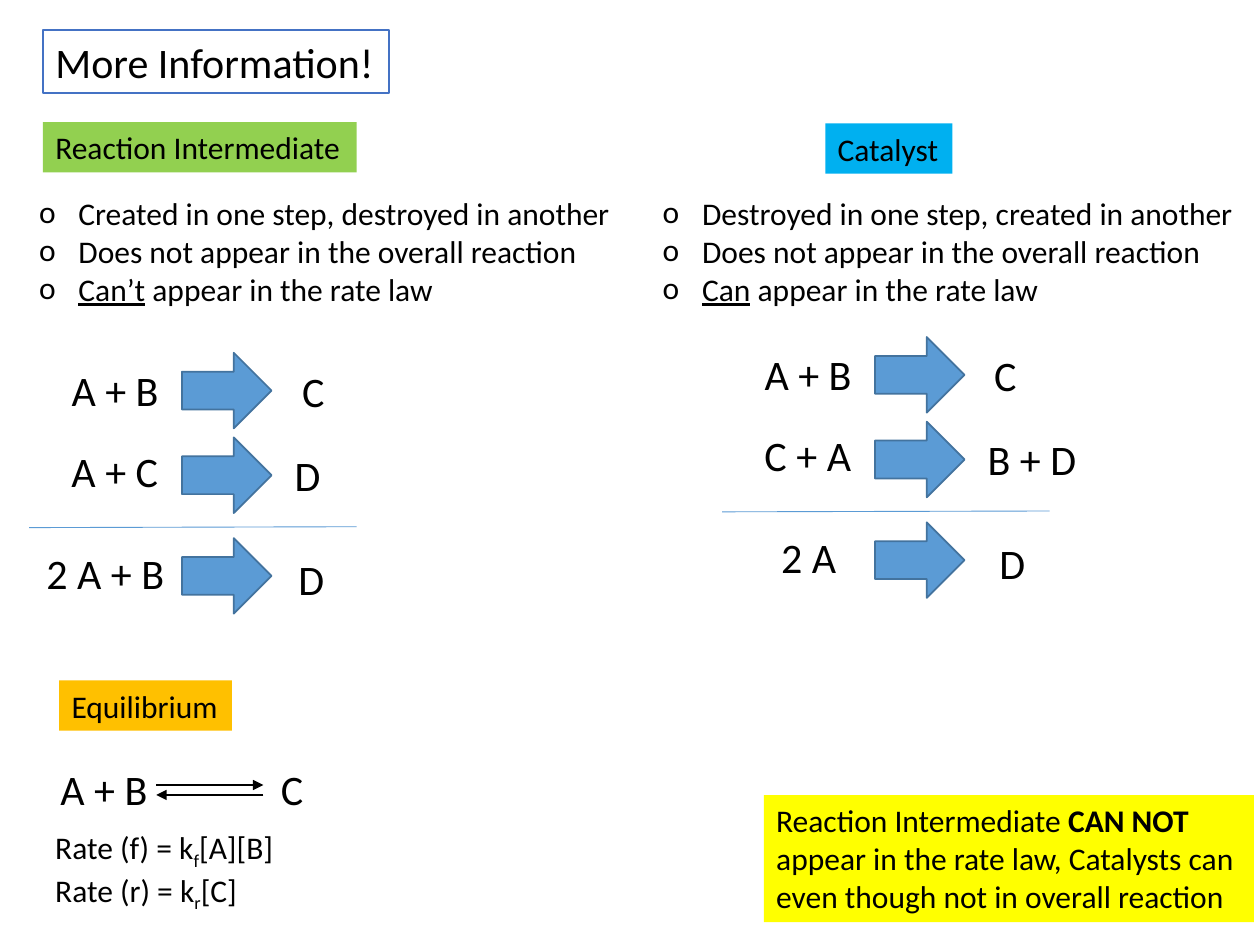
from dataclasses import dataclass

import pptx
import pptx.dml.color
import pptx.enum.shapes
import pptx.enum.text
import pptx.oxml.ns
import pptx.util
from lxml import etree

Pt = pptx.util.Pt
SHAPES = pptx.enum.shapes.MSO_SHAPE


@dataclass(frozen=True)
class Theme:
    font: str = "Calibri"
    large: int = 24
    normal: int = 18
    ink: str = "000000"
    paper: str = "FFFFFF"
    title_line: str = "4472C4"
    intermediate: str = "92D050"
    catalyst: str = "00B0F0"
    equilibrium: str = "FFC000"
    note: str = "FFFF00"
    arrow: str = "5B9BD5"
    arrow_line: str = "43739E"


THEME = Theme()


@dataclass(frozen=True)
class Span:
    text: str
    bold: bool = False
    underline: bool = False
    subscript: bool = False


@dataclass(frozen=True)
class Place:
    left: float
    top: float
    width: float
    height: float


@dataclass(frozen=True)
class Side:
    """One side of a reaction step; left is measured from the mechanism's origin."""
    text: str
    left: float
    width: float


@dataclass(frozen=True)
class Mechanism:
    left: float
    top: float
    steps: tuple[tuple[Side, Side], ...]


# Tops of the reactants, arrow and products in each row of a mechanism
ROW_TOPS = ((204.6, 201.6, 205.4), (251.1, 250, 253.2), (309.2, 307.5, 312.6))

MECHANISMS = (
    Mechanism(0, 0, (
        (Side("A + B", 33.8, 70), Side("C", 165.5, 27)),
        (Side("A + C", 33.8, 64), Side("D", 161.3, 30)),
        (Side("2 A + B", 19.4, 82), Side("D", 163.4, 30)),
    )),
    Mechanism(396, -9, (
        (Side("A + B", 33.8, 70), Side("C", 165, 27)),
        (Side("C + A", 33.8, 66), Side("B + D", 161.3, 66)),
        (Side("2 A", 43.2, 46), Side("D", 168, 30)),
    )),
)


def color(value: str) -> pptx.dml.color.RGBColor:
    return pptx.dml.color.RGBColor.from_string(value)


def put(shape, place: Place) -> None:
    shape.left, shape.top = Pt(place.left), Pt(place.top)
    shape.width, shape.height = Pt(place.width), Pt(place.height)


def paint(shape, fill: str, line: str | None = None) -> None:
    shape.fill.solid()
    shape.fill.fore_color.rgb = color(fill)
    if line:
        shape.line.color.rgb = color(line)
        shape.line.width = Pt(1)
    else:
        shape.line.fill.background()


def add_bullet(para) -> None:
    properties = para._p.get_or_add_pPr()
    properties.set("marL", str(Pt(22.5)))
    properties.set("indent", str(Pt(-22.5)))
    for tag, key, value in (("a:buFont", "typeface", THEME.font), ("a:buChar", "char", "o")):
        etree.SubElement(properties, pptx.oxml.ns.qn(tag)).set(key, value)


def write(shape, *paragraphs: tuple[Span, ...], size: int = THEME.normal,
          wrap: bool = False, bullets: bool = False) -> None:
    frame = shape.text_frame
    frame.word_wrap = wrap
    frame.auto_size = pptx.enum.text.MSO_AUTO_SIZE.NONE
    frame.vertical_anchor = pptx.enum.text.MSO_ANCHOR.TOP
    for index, spans in enumerate(paragraphs):
        para = frame.add_paragraph() if index else frame.paragraphs[0]
        para.alignment = pptx.enum.text.PP_ALIGN.LEFT
        para.space_before = Pt(0)
        if bullets:
            add_bullet(para)
        for item in spans:
            span = para.add_run()
            span.text = item.text
            span.font.name, span.font.size = THEME.font, Pt(size)
            span.font.color.rgb = color(THEME.ink)
            span.font.bold, span.font.underline = item.bold, item.underline
            if item.subscript:
                span._r.get_or_add_rPr().set("baseline", "-25000")


def add_text(page, place: Place, *paragraphs: tuple[Span, ...], size: int = THEME.large) -> None:
    box = page.shapes.add_textbox(0, 0, 0, 0)
    put(box, place)
    write(box, *paragraphs, size=size)


def add_shape(page, kind, place: Place, fill: str, line: str | None = None):
    shape = page.shapes.add_shape(kind, 0, 0, 0, 0)
    put(shape, place)
    shape.shadow.inherit = False
    paint(shape, fill, line)
    return shape


def add_label(page, place: Place, fill: str, *spans: Span, wrap: bool = False) -> None:
    write(add_shape(page, SHAPES.RECTANGLE, place, fill), spans, wrap=wrap)


def add_line(page, start: tuple[float, float], end: tuple[float, float],
             line: str, width: float, arrowhead: bool = False) -> None:
    connector = page.shapes.add_connector(
        pptx.enum.shapes.MSO_CONNECTOR.STRAIGHT, *(Pt(value) for value in start + end))
    connector.line.color.rgb = color(line)
    connector.line.width = Pt(width)
    if arrowhead:
        stroke = connector.line._get_or_add_ln()
        etree.SubElement(stroke, pptx.oxml.ns.qn("a:tailEnd")).set("type", "triangle")
    etree.SubElement(connector._element.spPr, pptx.oxml.ns.qn("a:effectLst"))


def add_mechanism(page, mechanism: Mechanism) -> None:
    x, y = mechanism.left, mechanism.top
    for sides, (reactant_top, arrow_top, product_top) in zip(mechanism.steps, ROW_TOPS):
        add_shape(page, SHAPES.RIGHT_ARROW, Place(x + 104, y + arrow_top, 51.2, 43.2),
                  THEME.arrow, THEME.arrow_line)
        for side, top in zip(sides, (reactant_top, product_top)):
            add_text(page, Place(x + side.left, y + top, side.width, 36), (Span(side.text),))
    add_line(page, (x + 16.6, y + 301.5), (x + 203.8, y + 301), THEME.arrow, 0.5)


def add_list(holder, left: float, first: str, emphasis: str) -> None:
    put(holder, Place(left, 107.3, 344.5, 72.7))
    write(holder, (Span(first),), (Span("Does not appear in the overall reaction"),),
          (Span(emphasis, underline=True), Span(" appear in the rate law")), bullets=True)


def add_equilibrium(page) -> None:
    add_label(page, Place(33.8, 388.8, 98.8, 28.8), THEME.equilibrium, Span("Equilibrium"))
    for text, left, width in (("A + B", 27.4, 70), ("C", 153.4, 27)):
        add_text(page, Place(left, 432.7, width, 36), (Span(text),))
    left, right = 89.3, 150.5
    add_line(page, (left, 448.6), (right, 448.6), THEME.ink, 1, arrowhead=True)
    add_line(page, (right, 454.3), (left, 454.3), THEME.ink, 1, arrowhead=True)
    rates = (("f", "[A][B]"), ("r", "[C]"))
    add_text(page, Place(24.5, 469.4, 141, 51),
             *((Span(f"Rate ({way}) = k"), Span(way, subscript=True), Span(species))
               for way, species in rates), size=THEME.normal)


def main() -> None:
    deck = pptx.Presentation()
    deck.slide_width, deck.slide_height = Pt(720), Pt(540)
    page = deck.slides.add_slide(deck.slide_layouts.get_by_name("Two Content"))
    title, intermediate_list, catalyst_list = list(page.placeholders)[:3]

    put(title, Place(24.5, 17.3, 198, 36))
    paint(title, THEME.paper, THEME.title_line)
    write(title, (Span("More Information!"),), size=THEME.large)

    add_label(page, Place(24.5, 69.8, 179.3, 28.8), THEME.intermediate,
              Span("Reaction Intermediate"))
    add_label(page, Place(471.6, 70.5, 72.7, 28.8), THEME.catalyst, Span("Catalyst"))
    add_list(intermediate_list, 15.1, "Created in one step, destroyed in another", "Can’t")
    add_list(catalyst_list, 371.5, "Destroyed in one step, created in another", "Can")
    for mechanism in MECHANISMS:
        add_mechanism(page, mechanism)
    add_equilibrium(page)
    add_label(page, Place(436.5, 454.3, 280, 72.7), THEME.note,
              Span("Reaction Intermediate "), Span("CAN NOT ", bold=True),
              Span("appear in the rate law, Catalysts can even though not in overall reaction"),
              wrap=True)
    deck.save("out.pptx")


if __name__ == "__main__":
    main()
